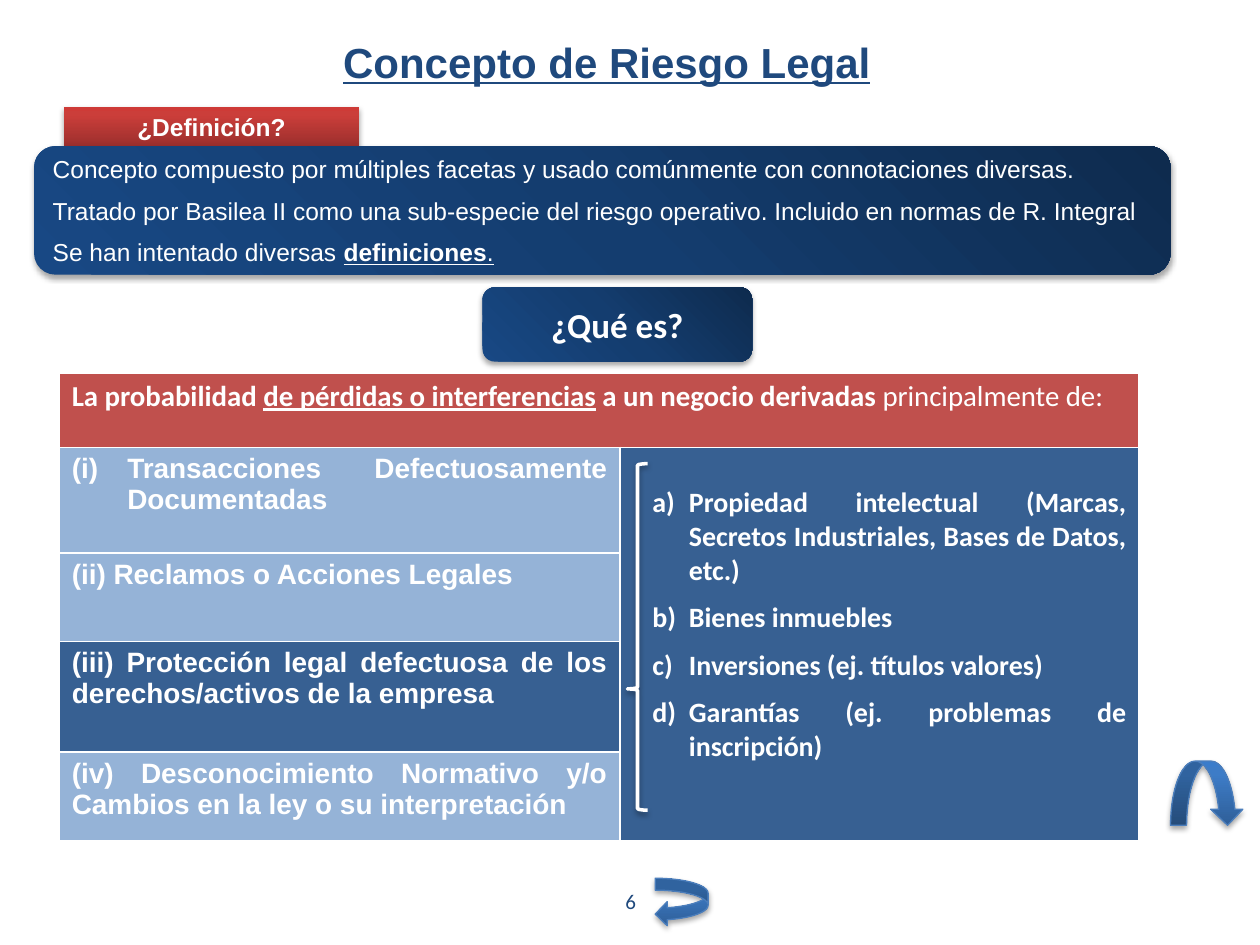
from lxml import etree
from pptx import Presentation
from pptx.dml.color import RGBColor
from pptx.enum.shapes import MSO_SHAPE
from pptx.enum.text import MSO_ANCHOR, PP_ALIGN
from pptx.oxml.ns import qn
from pptx.util import Emu, Pt

SCALE = 9144  # EMU in one px, 100 px to the inch
RECT, ROUND = MSO_SHAPE.RECTANGLE, MSO_SHAPE.ROUNDED_RECTANGLE
BRACE = MSO_SHAPE.LEFT_BRACE
BACK, DOWN = MSO_SHAPE.CURVED_LEFT_ARROW, MSO_SHAPE.CURVED_DOWN_ARROW
MID, TOP = MSO_ANCHOR.MIDDLE, MSO_ANCHOR.TOP
MIDDLE, FULL = PP_ALIGN.CENTER, PP_ALIGN.JUSTIFY

COLORS = {
    "white": "FFFFFF", "navy": "1F497D", "red": "C0504D",
    "light": "95B3D7", "dark": "376092", "edge": "4B7EBC", "black": "000000",
}
# Gradient stops: position in percent, colour
GRADS = {
    "red": [(0, "9C2F2D"), (80, "CB3E3A"), (100, "CE3B37")],
    "blue": [(0, "2F5F99"), (80, "3D7CC7"), (100, "3A7CCB")],
    "deep": [(0, "0E2B4E"), (50, "143D6F"), (100, "184884")],
}


def px(n):
    return Emu(n * SCALE)


def box(*nums):
    return [px(n) for n in nums]


def rgb(name):
    return RGBColor.from_string(COLORS[name])


def node(root, tag, **attrs):
    return etree.SubElement(root, qn("a:" + tag), {k: str(v) for k, v in attrs.items()})


def write(frame, paras, size, font, color="white", bold=False, align=MIDDLE,
          anchor=MID, gap=0, mark=None, indent=0):
    """Each paragraph is a list of (text, changes) runs."""
    frame.word_wrap = True
    frame.vertical_anchor = anchor
    for i, runs in enumerate(paras):
        para = frame.paragraphs[0] if i == 0 else frame.add_paragraph()
        para.alignment = align
        if gap and i:
            para.space_before = Pt(gap)
        if mark:
            props = para._p.get_or_add_pPr()
            props.set("marL", str(px(indent)))
            props.set("indent", str(-px(indent)))
            node(props, "buFont", typeface="+mj-lt")
            node(props, "buAutoNum", type=mark)
        for text, look in runs:
            run = para.add_run()
            run.text = text
            run.font.size, run.font.name = Pt(size), font
            run.font.color.rgb = rgb(color)
            run.font.bold = look.get("bold", bold)
            run.font.underline = look.get("under", False)


def label(slide, place, paras, size, font, **style):
    shape = slide.shapes.add_textbox(*box(*place))
    write(shape.text_frame, paras, size, font, **style)


def shade(shape, name):
    """Fill with a gradient, round from the top right for the deep one."""
    shape.fill.gradient()
    grad = shape._element.spPr.find(qn("a:gradFill"))
    for child in list(grad):
        grad.remove(child)
    stops = node(grad, "gsLst")
    for pos, color in GRADS[name]:
        node(node(stops, "gs", pos=pos * 1000), "srgbClr", val=color)
    if name == "deep":
        node(node(grad, "path", path="circle"), "fillToRect", l=100000, b=100000)
    else:
        node(grad, "lin", ang=270 * 60000, scaled=0)


def solid(slide, kind, place, grad=None, edge=None, width=1):
    """Add a preset shape with a soft shadow below it."""
    shape = slide.shapes.add_shape(kind, *box(*place))
    if grad:
        shade(shape, grad)
    else:
        shape.fill.background()
    if edge:
        shape.line.color.rgb = rgb(edge)
        shape.line.width = Pt(width)
    else:
        shape.line.fill.background()
    shape.shadow.inherit = False
    cast = node(shape._element.spPr.find(qn("a:effectLst")), "outerShdw",
                blurRad=40000, dist=23000, dir=90 * 60000, rotWithShape=0)
    node(node(cast, "srgbClr", val=COLORS["black"]), "alpha", val=35000)
    return shape


def paint(cell, color):
    """Give a cell thin white borders and a plain fill."""
    props = cell._tc.get_or_add_tcPr()
    for side in ("lnL", "lnR", "lnT", "lnB"):
        line = node(props, side, w=Pt(1))
        node(node(line, "solidFill"), "srgbClr", val=COLORS["white"])
    cell.fill.solid()
    cell.fill.fore_color.rgb = rgb(color)


def causes(slide):
    cols, rows = (445, 412), (59, 84, 70, 88, 70)
    place = box(47, 296, sum(cols), sum(rows))
    table = slide.shapes.add_table(len(rows), len(cols), *place).table
    table.first_row = table.horz_banding = False
    for col, width in zip(table.columns, cols):
        col.width = px(width)
    for row, height in zip(table.rows, rows):
        row.height = px(height)
    table.cell(0, 0).merge(table.cell(0, 1))
    table.cell(1, 1).merge(table.cell(4, 1))
    fills = ("red", "light", "light", "dark", "light")
    for i, fill in enumerate(fills):
        paint(table.cell(i, 0), fill)
        paint(table.cell(i, 1), "dark" if i else fill)

    head = [("La probabilidad ", {}), ("de pérdidas o interferencias", {"under": True}),
            (" a un negocio derivadas", {}), (" principalmente de:", {"bold": False})]
    style = {"bold": True, "align": FULL, "anchor": TOP}
    write(table.cell(0, 0).text_frame, [head], 16.5, "Calibri", **style)
    items = ("Transacciones Defectuosamente Documentadas",
             "(ii) Reclamos o Acciones Legales",
             "(iii) Protección legal defectuosa de los derechos/activos de la empresa",
             "(iv) Desconocimiento Normativo y/o Cambios en la ley o su interpretación")
    for i, text in enumerate(items, 1):
        mark = "romanLcParenBoth" if i == 1 else None
        write(table.cell(i, 0).text_frame, [[(text, {})]], 16, "Arial",
              mark=mark, indent=44, **style)


def assets(slide):
    brace = solid(slide, BRACE, (498, 368, 16, 275), edge="white", width=2)
    brace.adjustments[0], brace.adjustments[1] = 0.08, 0.65
    items = ("Propiedad intelectual (Marcas, Secretos Industriales, Bases de Datos, etc.)",
             "Bienes inmuebles", "Inversiones (ej. títulos valores)",
             "Garantías (ej. problemas de inscripción)")
    label(slide, (508, 380, 396, 267), [[(text, {})] for text in items], 16, "Calibri",
          bold=True, align=FULL, anchor=TOP, gap=8, mark="alphaLcParenR", indent=29)


def concept(slide):
    shape = solid(slide, ROUND, (27, 116, 902, 102), "deep")
    paras = [
        [("Concepto compuesto por múltiples facetas y usado comúnmente con "
          "connotaciones diversas.", {})],
        [("Tratado por Basilea II como una sub-especie del riesgo operativo. "
          "Incluido en normas de R. Integral", {})],
        [("Se han intentado diversas ", {}), ("definiciones", {"bold": True, "under": True}),
         (".", {"under": True})],
    ]
    write(shape.text_frame, paras, 14, "Arial", align=FULL, gap=7)


def main():
    deck = Presentation()
    deck.slide_width, deck.slide_height = box(1000, 750)
    slide = deck.slides.add_slide(deck.slide_layouts[6])

    # Table of causes and the two tags
    causes(slide)
    tag = solid(slide, RECT, (51, 85, 234, 31), "red")
    write(tag.text_frame, [[("¿Definición?", {})]], 14, "Arial", bold=True)
    ask = solid(slide, ROUND, (383, 228, 214, 59), "deep")
    write(ask.text_frame, [[("¿Qué es?", {})]], 20, "Calibri", bold=True)

    # Page number, list of assets and title
    label(slide, (342, 695, 317, 40), [[("6", {})]], 12, "Calibri", color="navy")
    assets(slide)
    title = [(" ", {}), ("Concepto de Riesgo Legal", {"under": True})]
    label(slide, (27, 13, 900, 72), [title], 24, "Arial", color="navy", bold=True)

    # Curved arrows, then the concept panel in front
    for kind, place in ((BACK, (520, 697, 42, 38)), (DOWN, (929, 604, 58, 51))):
        solid(slide, kind, place, "blue", "edge", 0.75)
    concept(slide)

    deck.save("out.pptx")


if __name__ == "__main__":
    main()
